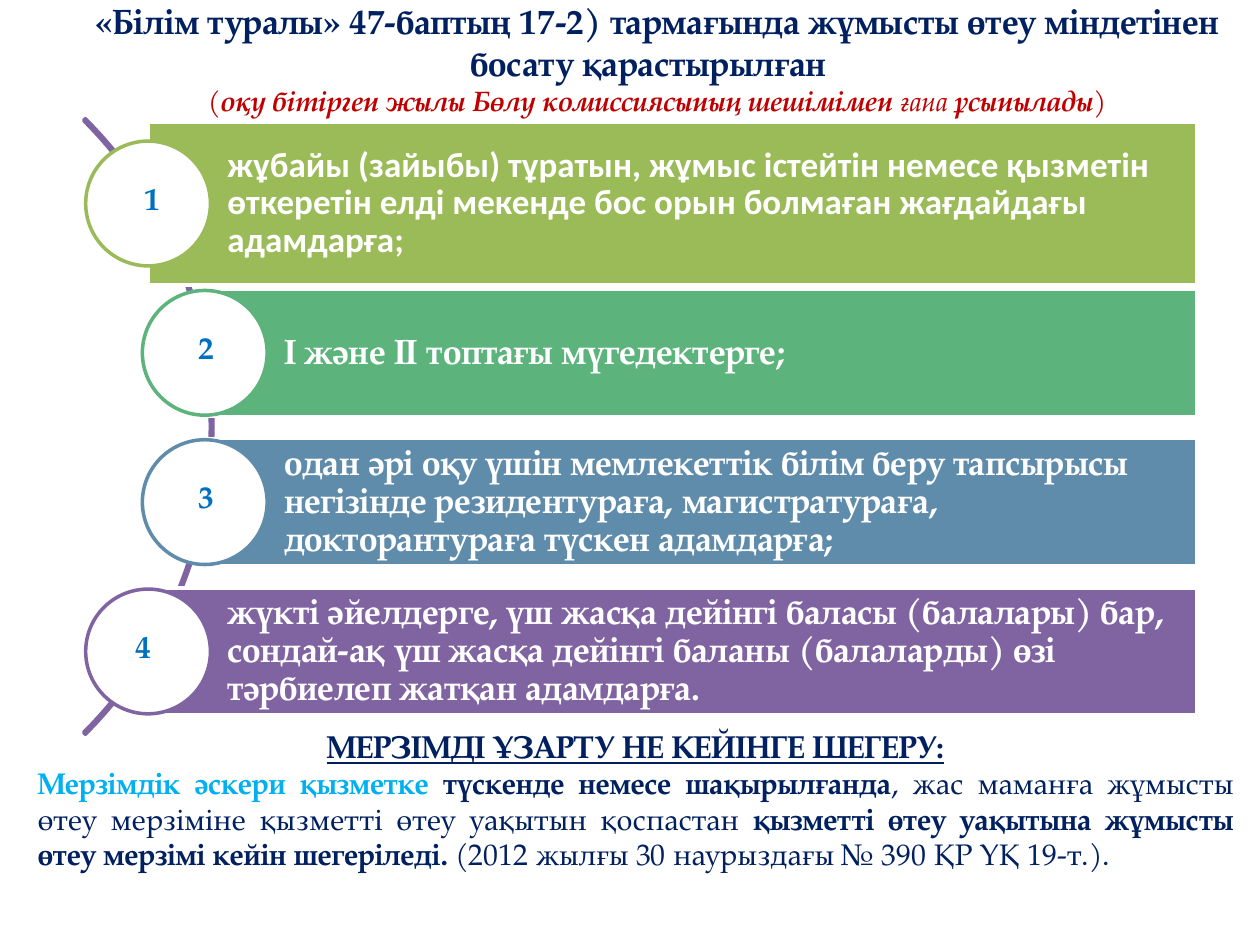
from dataclasses import dataclass

from pptx import Presentation
from pptx.dml.color import RGBColor
from pptx.enum.shapes import MSO_SHAPE
from pptx.enum.text import MSO_ANCHOR, MSO_AUTO_SIZE, PP_ALIGN
from pptx.util import Inches, Pt


@dataclass(frozen=True)
class Theme:
    serif: str = "TeX Gyre Pagella"
    sans: str = "Calibri"
    navy: str = "002060"
    red: str = "C00000"
    blue: str = "0070C0"
    sky: str = "00B0F0"
    white: str = "FFFFFF"
    arc: str = "8064A2"
    heading: int = 20
    subtitle: int = 16
    number: int = 18
    deadline: int = 18
    body: int = 17
    line: int = 2


@dataclass(frozen=True)
class Ground:
    text: str
    color: str
    circle_left: float
    number_left: float
    bar_height: float = 1.01
    font: str = Theme.serif


THEME = Theme()
CIRCLE, PITCH, FIRST_TOP, BAR_RIGHT = 0.99, 1.185, 1.12, 9.5

GROUNDS = [
    Ground("жұбайы (зайыбы) тұратын, жұмыс істейтін немесе қызметін өткеретін "
           "елді мекенде бос орын болмаған жағдайдағы адамдарға;",
           "9BBB59", 0.68, 1.05, bar_height=1.29, font=THEME.sans),
    Ground("І және ІІ топтағы мүгедектерге;", "5CB37C", 1.13, 1.48),
    Ground("одан әрі оқу үшін мемлекеттік білім беру тапсырысы негізінде "
           "резидентураға, магистратураға, докторантураға түскен адамдарға;",
           "608CAB", 1.13, 1.48),
    Ground("жүкті әйелдерге, үш жасқа дейінгі баласы (балалары) бар, сондай-ақ "
           "үш жасқа дейінгі баланы (балаларды) өзі тәрбиелеп жатқан адамдарға.",
           "8064A2", 0.68, 0.98),
]

SUBTITLE = [
    ("(", False),
    ("оқу бітірген жылы Бөлу комиссиясының шешімімен ", True),
    ("ғана ", False),
    ("ұсынылады", True),
    (")", False),
]

DEADLINE_RULE = [
    ("Мерзімдік әскери қызметке ", True, THEME.sky),
    ("түскенде немесе шақырылғанда", True, THEME.navy),
    (", жас маманға жұмысты өтеу мерзіміне қызметті өтеу уақытын қоспастан ",
     False, THEME.navy),
    ("қызметті өтеу уақытына жұмысты өтеу мерзімі кейін шегеріледі.",
     True, THEME.navy),
    (" (2012 жылғы 30 наурыздағы № 390 ҚР ҮҚ 19-т.). ", False, THEME.navy),
]


def add_run(p, text: str, size: int, color: str, **font_format) -> None:
    r = p.add_run()
    r.text = text
    values = {"name": THEME.serif, "size": Pt(size), "bold": True, **font_format}
    for name, value in values.items():
        setattr(r.font, name, value)
    r.font.color.rgb = RGBColor.from_string(color)


def add_outlined(s, kind: MSO_SHAPE, box: tuple, line: str, fill: str | None = None):
    sp = s.shapes.add_shape(kind, *map(Inches, box))
    sp.shadow.inherit = False
    if fill:
        sp.fill.solid()
        sp.fill.fore_color.rgb = RGBColor.from_string(fill)
    else:
        sp.fill.background()
    sp.line.color.rgb = RGBColor.from_string(line)
    sp.line.width = Pt(THEME.line)
    return sp


def add_textbox(s, box: tuple, wrap: bool):
    tf = s.shapes.add_textbox(*map(Inches, box)).text_frame
    tf.word_wrap = wrap
    return tf


def add_title(s) -> None:
    sp = s.shapes.title
    place = {"left": 0.43, "top": -0.06, "width": 9.57, "height": 1.04}
    for name, value in place.items():
        setattr(sp, name, Inches(value))
    tf = sp.text_frame
    tf.auto_size = MSO_AUTO_SIZE.NONE
    tf.vertical_anchor = MSO_ANCHOR.MIDDLE
    p = tf.paragraphs[0]
    p.alignment = PP_ALIGN.CENTER
    add_run(p, "«Білім туралы» 47-баптың 17-2) тармағында жұмысты өтеу "
               "міндетінен босату қарастырылған  ", THEME.heading, THEME.navy)
    p.add_line_break()
    for text, bold in SUBTITLE:
        add_run(p, text, THEME.subtitle, THEME.red, bold=bold, italic=True)


def add_ground(s, index: int, ground: Ground) -> None:
    """Draw a bar with its text, and a circle centred on the bar's left edge."""
    top = FIRST_TOP + index * PITCH
    bar_left = ground.circle_left + CIRCLE / 2
    bar_top = top + (CIRCLE - ground.bar_height) / 2
    bar = add_outlined(
        s, MSO_SHAPE.RECTANGLE,
        (bar_left, bar_top, BAR_RIGHT - bar_left, ground.bar_height),
        THEME.white, ground.color)
    tf = bar.text_frame
    layout = {"word_wrap": True, "vertical_anchor": MSO_ANCHOR.MIDDLE,
              "margin_left": Inches(0.63), "margin_right": Inches(0.06),
              "margin_top": Inches(0.06), "margin_bottom": Inches(0.06)}
    for name, value in layout.items():
        setattr(tf, name, value)
    p = tf.paragraphs[0]
    p.alignment = PP_ALIGN.LEFT
    p.line_spacing = 0.9
    add_run(p, ground.text, THEME.heading, THEME.white, name=ground.font)
    add_outlined(s, MSO_SHAPE.OVAL, (ground.circle_left, top, CIRCLE, CIRCLE),
                 ground.color, THEME.white)
    number = add_textbox(s, (ground.number_left, top + 0.25, 0.33, 0.4), wrap=False)
    add_run(number.paragraphs[0], str(index + 1), THEME.number, THEME.blue)


def add_deadline(s) -> None:
    tf = add_textbox(s, (0.2, 5.72, 9.69, 1.55), wrap=True)
    p = tf.paragraphs[0]
    p.alignment = PP_ALIGN.CENTER
    add_run(p, "МЕРЗІМДІ ҰЗАРТУ НЕ КЕЙІНГЕ ШЕГЕРУ:", THEME.deadline,
            THEME.navy, underline=True)
    p = tf.add_paragraph()
    p.alignment = PP_ALIGN.JUSTIFY
    for text, bold, color in DEADLINE_RULE:
        add_run(p, text, THEME.body, color, bold=bold)


def main() -> None:
    prs = Presentation()
    prs.slide_width, prs.slide_height = Inches(10), Inches(7.5)
    s = prs.slides.add_slide(prs.slide_layouts.get_by_name("Title Only"))
    add_title(s)
    arc = add_outlined(s, MSO_SHAPE.BLOCK_ARC, (-5.22, -0.07, 6.91, 6.91), THEME.arc)
    for i, value in enumerate((189, 27, 0.003)):
        arc.adjustments[i] = value
    for i, ground in enumerate(GROUNDS):
        add_ground(s, i, ground)
    add_deadline(s)
    prs.save("out.pptx")


if __name__ == "__main__":
    main()
